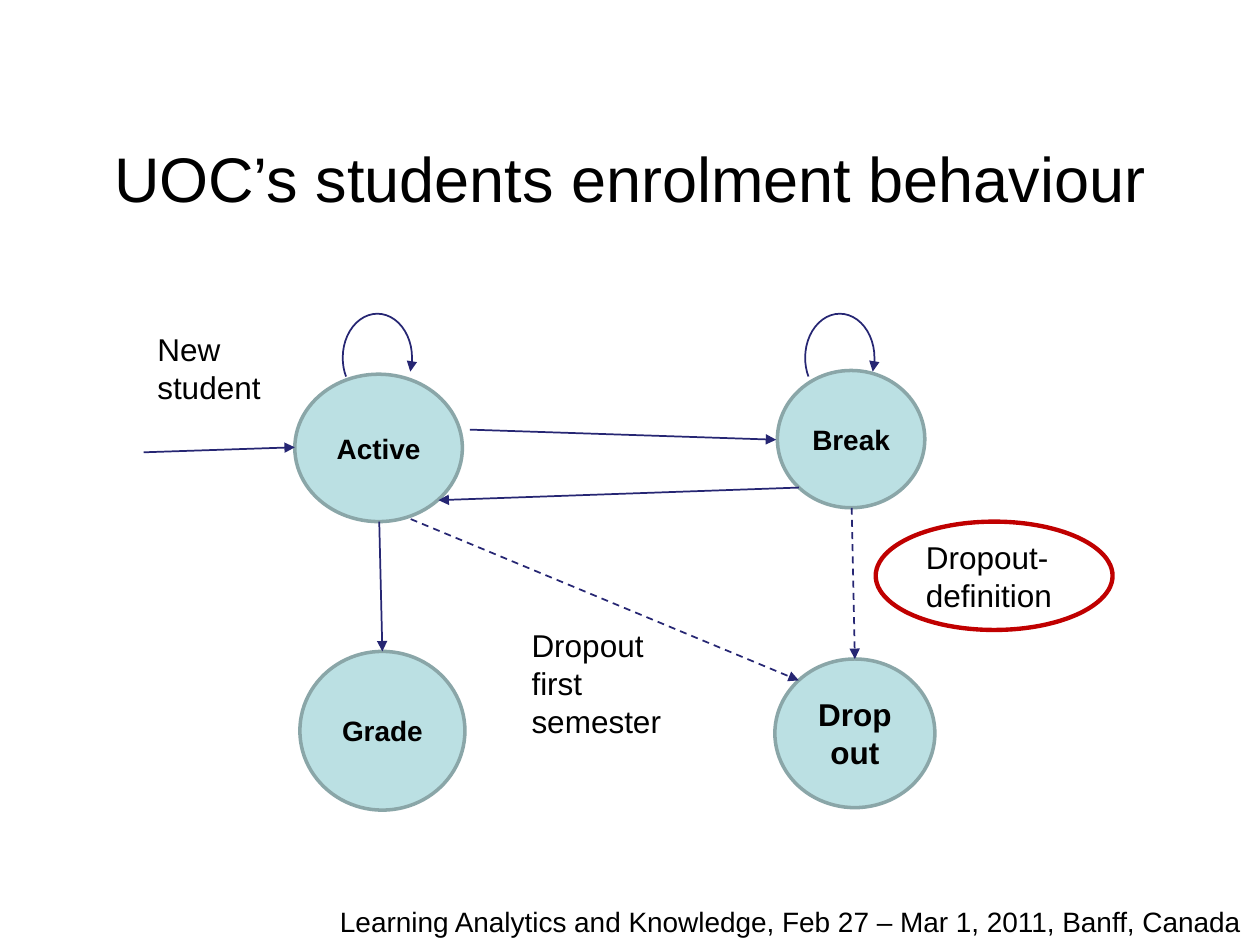
"""Build a slide with a state diagram of student enrolment."""
from typing import NamedTuple, Optional

from lxml import etree
from pptx import Presentation
from pptx.dml.color import RGBColor
from pptx.enum.dml import MSO_LINE
from pptx.enum.shapes import MSO_CONNECTOR, MSO_SHAPE
from pptx.enum.text import MSO_ANCHOR, MSO_AUTO_SIZE, PP_ALIGN
from pptx.oxml.ns import qn
from pptx.util import Inches, Pt

ELLIPSE, ARC = MSO_SHAPE.OVAL, MSO_SHAPE.ARC
STRAIGHT, DASH = MSO_CONNECTOR.STRAIGHT, MSO_LINE.DASH
CENTER, LEFT, MIDDLE, TOP = PP_ALIGN.CENTER, PP_ALIGN.LEFT, MSO_ANCHOR.MIDDLE, MSO_ANCHOR.TOP
FIT_SHAPE, NO_FIT = MSO_AUTO_SIZE.SHAPE_TO_FIT_TEXT, MSO_AUTO_SIZE.NONE
BLACK, NODE_FILL, NODE_LINE = "000000", "BBE0E3", "8AA6A8"
ARROW_COLOR, HIGHLIGHT = "262673", "C00000"
TOP_SITE = 0


class Box(NamedTuple):
    left: float
    top: float
    width: float
    height: float


class State(NamedTuple):
    text: str
    box: Box
    size: int = 16


class Transition(NamedTuple):
    start: tuple
    end: tuple
    dashed: bool = False
    target: Optional[str] = None


class Label(NamedTuple):
    text: str
    box: Box
    size: int = 18
    wrap: bool = True


STATES = [
    State("Active", Box(2.34, 2.97, 1.33, 1.17)),
    State("Break", Box(6.17, 2.94, 1.17, 1.09)),
    State("Drop\nout", Box(6.15, 5.23, 1.27, 1.18), 18),
    State("Grade", Box(2.38, 5.17, 1.31, 1.26)),
]
TRANSITIONS = [
    Transition((1.14, 3.59), (2.34, 3.55)),
    Transition((3.73, 3.41), (6.16, 3.49)),
    Transition((6.34, 3.87), (3.48, 3.97)),
    Transition((3.01, 4.14), (3.03, 5.17), target="Grade"),
    Transition((6.76, 4.03), (6.79, 5.23), True, "Drop\nout"),
    Transition((3.26, 4.12), (6.34, 5.4), True),
]
LOOPS = [Box(2.72, 2.49, 0.55, 0.7), Box(6.39, 2.49, 0.55, 0.7)]
LABELS = [
    Label("New student", Box(1.15, 2.57, 1.09, 0.7)),
    Label("Dropout first semester", Box(4.12, 4.92, 1.41, 1)),
    Label("Dropout-definition", Box(7.25, 4.22, 1.41, 0.7)),
    Label("Learning Analytics and Knowledge, Feb 27 – Mar 1, 2011, Banff, Canada",
          Box(2.6, 7.13, 7.4, 0.37), 16, False),
]
HIGHLIGHT_BOX = Box(6.95, 4.14, 1.88, 0.86)


def color(value: str) -> RGBColor:
    """Turn a hex string into a colour."""
    return RGBColor.from_string(value)


def lengths(values) -> list:
    """Turn inches into lengths."""
    return [Inches(value) for value in values]


def write(shape, text: str, size: int, align, anchor, bold=False, fit=NO_FIT, wrap=True) -> None:
    """Put formatted text into a shape."""
    frame = shape.text_frame
    frame.text = text
    frame_format = {"word_wrap": wrap, "auto_size": fit, "vertical_anchor": anchor}
    for name, value in frame_format.items():
        setattr(frame, name, value)
    font_format = {"name": "Arial", "size": Pt(size), "bold": bold}
    for paragraph in frame.paragraphs:
        paragraph.alignment = align
        for name, value in font_format.items():
            setattr(paragraph.font, name, value)
        paragraph.font.color.rgb = color(BLACK)


def style_line(shape, hex_color: str, width: float, arrow=False) -> None:
    """Set the outline of a shape, with an arrowhead at its end if asked."""
    shape.line.color.rgb = color(hex_color)
    shape.line.width = Pt(width)
    if arrow:
        line = shape.line._get_or_add_ln()
        etree.SubElement(line, qn("a:tailEnd"), type="triangle")


def add_outline(slide, kind, box: Box, hex_color: str, width: float, arrow=False):
    """Add an unfilled shape without a shadow."""
    shape = slide.shapes.add_shape(kind, *lengths(box))
    shape.shadow.inherit = False
    shape.fill.background()
    style_line(shape, hex_color, width, arrow)
    return shape


def add_state(slide, state: State):
    """Add a filled circle for one enrolment state."""
    shape = add_outline(slide, ELLIPSE, state.box, NODE_LINE, 2)
    shape.fill.solid()
    shape.fill.fore_color.rgb = color(NODE_FILL)
    write(shape, state.text, state.size, CENTER, MIDDLE, bold=True)
    return shape


def add_loop(slide, box: Box) -> None:
    """Add the arc of a state that leads back to itself."""
    arc = add_outline(slide, ARC, box, ARROW_COLOR, 1, arrow=True)
    arc.adjustments[0], arc.adjustments[1] = 89.5, 13.67


def add_transition(slide, transition: Transition, states: dict) -> None:
    """Add an arrow between two states."""
    points = lengths(transition.start + transition.end)
    connector = slide.shapes.add_connector(STRAIGHT, *points)
    if transition.target:
        connector.end_connect(states[transition.target], TOP_SITE)
    if transition.dashed:
        connector.line.dash_style = DASH
    style_line(connector, ARROW_COLOR, 1, arrow=True)
    etree.SubElement(connector._element.spPr, qn("a:effectLst"))


def add_label(slide, label: Label) -> None:
    """Add a plain text box."""
    shape = slide.shapes.add_textbox(*lengths(label.box))
    write(shape, label.text, label.size, LEFT, TOP, fit=FIT_SHAPE, wrap=label.wrap)


def add_title(slide, text: str, box: Box) -> None:
    """Place and fill the title placeholder."""
    title = slide.shapes.title
    for name, value in zip(Box._fields, lengths(box)):
        setattr(title, name, value)
    write(title, text, 36, CENTER, MIDDLE)


def main() -> None:
    """Build and save the presentation."""
    presentation = Presentation()
    presentation.slide_width, presentation.slide_height = lengths((10, 7.5))
    slide = presentation.slides.add_slide(presentation.slide_layouts[5])
    add_title(slide, "UOC’s students enrolment behaviour", Box(0.5, 0.78, 9, 1.25))
    states = {state.text: add_state(slide, state) for state in STATES}
    for box in LOOPS:
        add_loop(slide, box)
    for transition in TRANSITIONS:
        add_transition(slide, transition, states)
    for label in LABELS:
        add_label(slide, label)
    add_outline(slide, ELLIPSE, HIGHLIGHT_BOX, HIGHLIGHT, 2.5)
    presentation.save("out.pptx")


if __name__ == "__main__":
    main()
